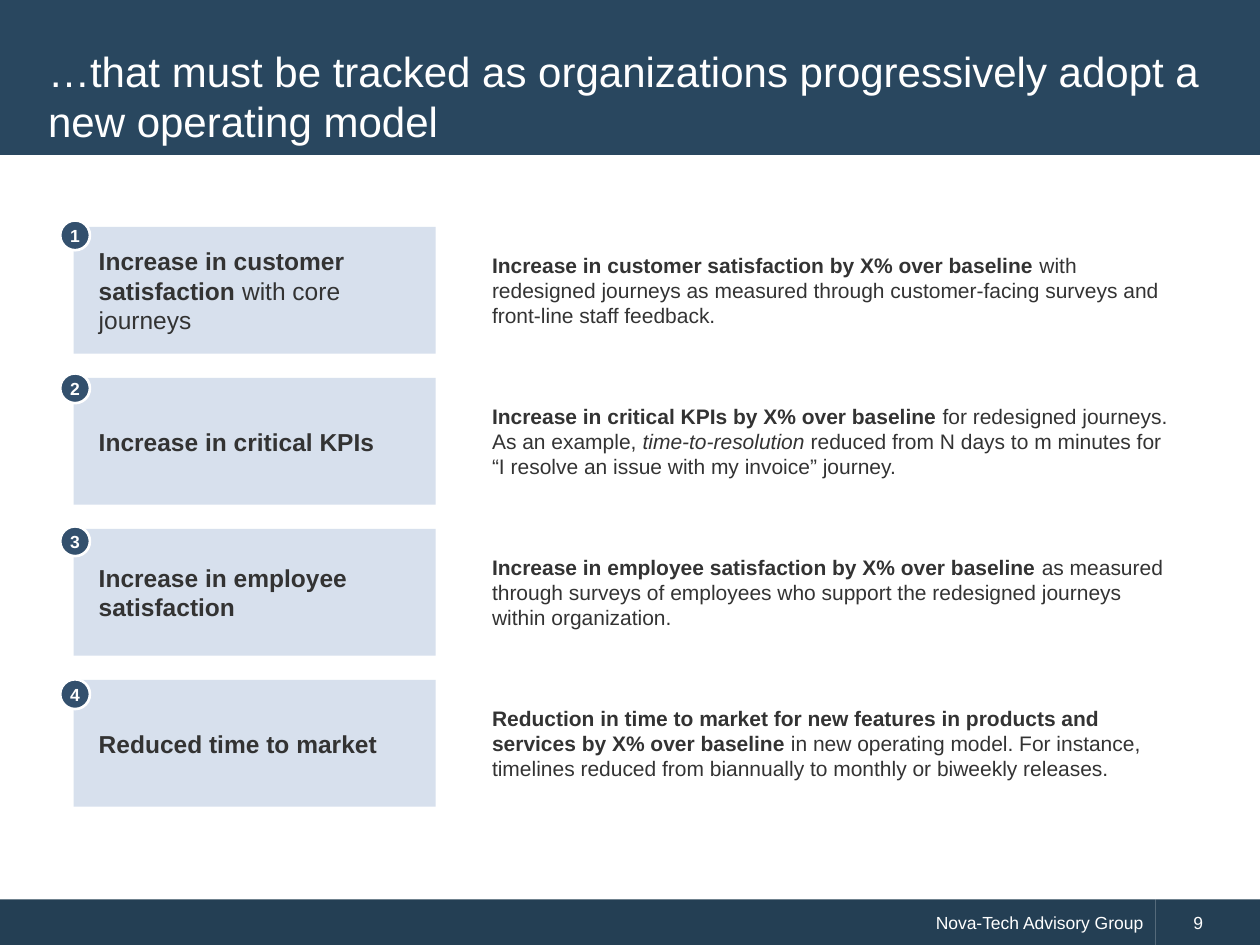
"""Build the slide on the measures to track while adopting a new operating model."""
from typing import Any, NamedTuple

from pptx import Presentation
from pptx.dml.color import RGBColor
from pptx.enum.shapes import MSO_SHAPE
from pptx.enum.text import MSO_ANCHOR, MSO_AUTO_SIZE, PP_ALIGN
from pptx.util import Pt

COLORS = {
    "band": "29475F",
    "footer": "243F54",
    "card": "D7E0ED",
    "badge": "33506D",
    "text": "333333",
    "white": "FFFFFF",
}
BOLD = {"bold": True}
ITALIC = {"italic": True}
PLAIN: dict[str, Any] = {}
CARD_INSETS = (14.4, 5.76, 5.76, 5.76)
DEFAULT_INSETS = (7.2, 3.6, 7.2, 3.6)

Runs = list[tuple[str, dict[str, Any]]]


class Box(NamedTuple):
    left: float
    top: float
    width: float
    height: float


class Metric(NamedTuple):
    name: Runs
    target: Runs


METRICS = [
    Metric(
        [("Increase in customer satisfaction ", BOLD), ("with core journeys", PLAIN)],
        [("Increase in customer satisfaction by X% over baseline ", BOLD),
         ("with redesigned journeys as measured through customer-facing surveys "
          "and front-line staff feedback.", PLAIN)],
    ),
    Metric(
        [("Increase in critical KPIs", BOLD)],
        [("Increase in critical KPIs by X% over baseline ", BOLD),
         ("for redesigned journeys. As an example, ", PLAIN),
         ("time-to-resolution", ITALIC),
         (" reduced from N days to m minutes for “I resolve an issue with my "
          "invoice” journey.", PLAIN)],
    ),
    Metric(
        [("Increase in employee satisfaction", BOLD)],
        [("Increase in employee satisfaction by X% over baseline ", BOLD),
         ("as measured through surveys of employees who support the redesigned "
          "journeys within organization.", PLAIN)],
    ),
    Metric(
        [("Reduced time to market", BOLD)],
        [("Reduction in time to market for new features in products and services "
          "by X% over baseline ", BOLD),
         ("in new operating model. For instance, timelines reduced from biannually "
          "to monthly or biweekly releases.", PLAIN)],
    ),
]


def rgb(name: str) -> RGBColor:
    """Return the named colour."""
    return RGBColor.from_string(COLORS[name])


def place(sp: Any, box: Box) -> None:
    """Set position and size from a box in points."""
    for key, value in box._asdict().items():
        setattr(sp, key, Pt(value))


def write(sp: Any, runs: Runs, size: float, color: str = "text",
          align: PP_ALIGN = PP_ALIGN.LEFT,
          insets: tuple[float, ...] = DEFAULT_INSETS) -> None:
    """Fill a shape with one paragraph of formatted runs."""
    tf = sp.text_frame
    sides = ("margin_left", "margin_top", "margin_right", "margin_bottom")
    frame = dict(zip(sides, map(Pt, insets)))
    frame |= {"word_wrap": True, "auto_size": MSO_AUTO_SIZE.NONE,
              "vertical_anchor": MSO_ANCHOR.MIDDLE}
    for key, value in frame.items():
        setattr(tf, key, value)
    p = tf.paragraphs[0]
    p.alignment = align
    for text, extra in runs:
        r = p.add_run()
        r.text = text
        font = {"name": "Arial", "size": Pt(size), "bold": False, "italic": False}
        for key, value in (font | extra).items():
            setattr(r.font, key, value)
        r.font.color.rgb = rgb(color)


def add_block(s: Any, box: Box, fill: str,
              kind: MSO_SHAPE = MSO_SHAPE.RECTANGLE) -> Any:
    """Add a flat filled shape without outline."""
    sp = s.shapes.add_shape(kind, *map(Pt, box))
    sp.shadow.inherit = False
    sp.fill.solid()
    sp.fill.fore_color.rgb = rgb(fill)
    sp.line.fill.background()
    return sp


def add_title(s: Any, text: str) -> None:
    """Draw the title band and set the title over it."""
    add_block(s, Box(0, 0, 720, 88.5), "band")
    title = s.shapes.title
    title.element.getparent().append(title.element)
    place(title, Box(20.3, 20, 679, 69))
    write(title, [(text, PLAIN)], 24, "white")


def add_footer(s: Any, owner: str, number: str) -> None:
    """Draw the footer band with owner and page number."""
    sp = add_block(s, Box(0, 513.9, 660.3, 26.6), "footer")
    write(sp, [(owner, PLAIN)], 10, "white", PP_ALIGN.RIGHT)
    sp = add_block(s, Box(660.3, 513.9, 59.7, 26.6), "footer")
    write(sp, [(number, PLAIN)], 10, "white", insets=(21.6, 3.6, 7.2, 3.6))


def add_metric(s: Any, i: int, metric: Metric) -> None:
    """Draw one row: name card, target text and numbered badge."""
    top = 129.6 + 86.3 * i
    card = add_block(s, Box(42, top, 207, 72.5), "card")
    write(card, metric.name, 14, insets=CARD_INSETS)
    target = add_block(s, Box(266.8, top, 410, 72.5), "white")
    write(target, metric.target, 12, insets=CARD_INSETS)
    badge = add_block(s, Box(34.4, 126 + 87.4 * i, 17, 17), "badge", MSO_SHAPE.OVAL)
    badge.line.color.rgb = rgb("white")
    badge.line.width = Pt(1.5)
    write(badge, [(str(i + 1), BOLD)], 10, "white", PP_ALIGN.CENTER, (0, 0, 0, 0))
    badge.text_frame.paragraphs[0].space_after = Pt(6)


def main() -> None:
    """Build and save the deck."""
    prs = Presentation()
    prs.slide_width, prs.slide_height = Pt(720), Pt(540)
    s = prs.slides.add_slide(prs.slide_layouts.get_by_name("Title Only"))
    add_footer(s, "Nova-Tech Advisory Group", "9")
    add_title(s, "…that must be tracked as organizations progressively adopt a "
                 "new operating model")
    for i, metric in enumerate(METRICS):
        add_metric(s, i, metric)
    prs.save("out.pptx")


if __name__ == "__main__":
    main()
